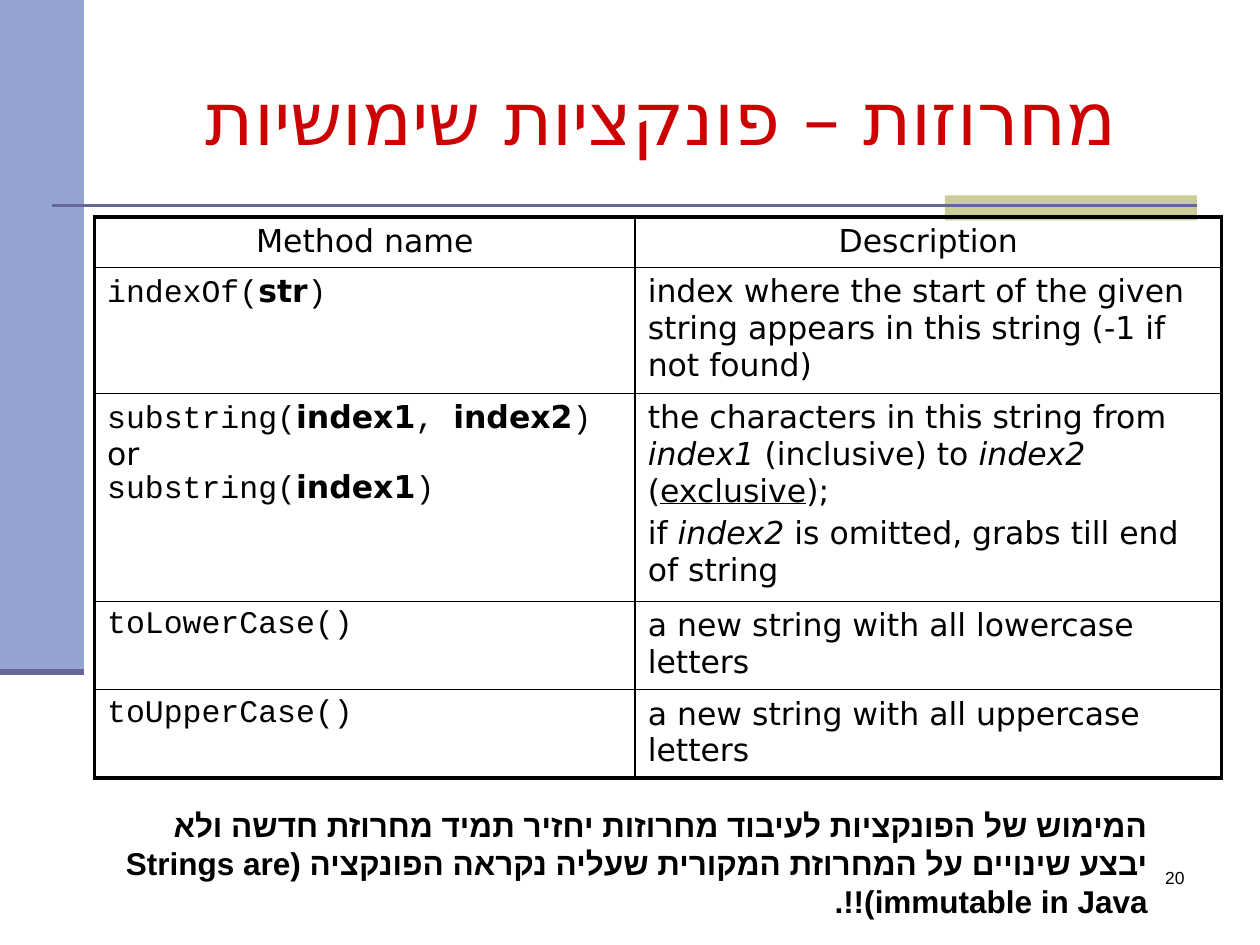
from lxml.etree import SubElement
from pptx import Presentation
from pptx.dml.color import RGBColor
from pptx.enum.shapes import MSO_CONNECTOR, MSO_SHAPE
from pptx.enum.text import MSO_ANCHOR, PP_ALIGN
from pptx.oxml.ns import qn
from pptx.util import Pt

BODY, CODE = "DejaVu Sans", "Courier New"
BLACK, PURPLE = "000000", "666699"
THIN, THICK = 1, 2.25

METHODS = [
    ([[("indexOf(", "code"), ("str", "bold"), (")", "code")]],
     [[("index where the start of the given string appears in this string "
        "(-1 if not found)", "")]]),
    ([[("substring(", "code"), ("index1", "bold"), (", ", "code"),
       ("index2", "bold"), (")", "code")],
      [("or", "")],
      [("substring(", "code"), ("index1", "bold"), (")", "code")]],
     [[("the characters in this string from ", ""), ("index1", "italic"),
       (" (inclusive) to ", ""), ("index2", "italic"), (" (", ""),
       ("exclusive", "underline"), (");", "")],
      [("if ", ""), ("index2", "italic"),
       (" is omitted, grabs till end of string", "")]]),
    ([[("toLowerCase()", "code")]],
     [[("a new string with all lowercase letters", "")]]),
    ([[("toUpperCase()", "code")]],
     [[("a new string with all uppercase letters", "")]]),
]


def color(value):
    return RGBColor.from_string(value)


def add_run(paragraph, text, size, font, fill=BLACK, bold=False, complex_font=None):
    run = paragraph.add_run()
    run.text = text
    run.font.size = Pt(size)
    run.font.name = font
    run.font.bold = bold
    run.font.color.rgb = color(fill)
    SubElement(run._r.get_or_add_rPr(), qn("a:cs"), typeface=complex_font or font)
    return run


def set_right_to_left(paragraph):
    paragraph._p.get_or_add_pPr().set("rtl", "1")


def add_bar(slide, left, top, width, height, fill):
    bar = slide.shapes.add_shape(
        MSO_SHAPE.RECTANGLE, Pt(left), Pt(top), Pt(width), Pt(height))
    bar.shadow.inherit = False
    bar.fill.solid()
    bar.fill.fore_color.rgb = color(fill)
    bar.line.fill.background()


def add_rule(slide, left, top, width, weight):
    rule = slide.shapes.add_connector(
        MSO_CONNECTOR.STRAIGHT, Pt(left), Pt(top), Pt(left + width), Pt(top))
    rule.line.color.rgb = color(PURPLE)
    rule.line.width = Pt(weight)
    SubElement(rule._element.spPr, qn("a:effectLst"))


def add_decoration(slide, left, top, width, height):
    add_bar(slide, left, top, 48, height, "95A3D1")
    add_bar(slide, left + width - 144, top + 111.6, 144, 14.4, "CCCC99")
    add_rule(slide, left + 30, top + 117.6, width - 30, 1.5)
    add_rule(slide, left, top + height, 48, 3.5)


def add_title(slide, left, top, width, height):
    title = slide.shapes.title
    title.left, title.top, title.width, title.height = map(
        Pt, (left, top, width, height))
    title.text_frame.vertical_anchor = MSO_ANCHOR.MIDDLE
    paragraph = title.text_frame.paragraphs[0]
    paragraph.alignment = PP_ALIGN.CENTER
    set_right_to_left(paragraph)
    add_run(paragraph, "מחרוזות – פונקציות שימושיות", 42, "Times New Roman",
            "CC0000", complex_font=BODY)


def set_borders(cell, weights):
    properties = cell._tc.get_or_add_tcPr()
    for index, (side, weight) in enumerate(weights.items()):
        line = properties.makeelement(qn(f"a:ln{side}"), {"w": str(Pt(weight))})
        fill = SubElement(line, qn("a:solidFill"))
        SubElement(fill, qn("a:srgbClr"), val=BLACK)
        properties.insert(index, line)


def fill_cell(cell, paragraphs, alignment):
    cell.fill.background()
    frame = cell.text_frame
    for index, pieces in enumerate(paragraphs):
        paragraph = frame.add_paragraph() if index else frame.paragraphs[0]
        paragraph.alignment = alignment
        paragraph.space_before = Pt(3.6)
        for text, style in pieces:
            run = add_run(paragraph, text, 18, CODE if style == "code" else BODY,
                          bold=style == "bold")
            run.font.italic = style == "italic"
            run.font.underline = style == "underline"


def add_method_table(slide, left, top, column_widths, row_heights):
    header = ([[("Method name", "")]], [[("Description", "")]])
    rows = [header] + METHODS
    table = slide.shapes.add_table(
        len(rows), len(header), Pt(left), Pt(top),
        Pt(sum(column_widths)), Pt(sum(row_heights))).table
    table.first_row = table.horz_banding = False
    for column, width in zip(table.columns, column_widths):
        column.width = Pt(width)
    for row, height in zip(table.rows, row_heights):
        row.height = Pt(height)
    last_row, last_column = len(rows) - 1, len(header) - 1
    for i, row in enumerate(rows):
        for j, paragraphs in enumerate(row):
            cell = table.cell(i, j)
            fill_cell(cell, paragraphs, PP_ALIGN.LEFT if i else PP_ALIGN.CENTER)
            set_borders(cell, {
                "L": THIN if j else THICK,
                "R": THICK if j == last_column else THIN,
                "T": THIN if i else THICK,
                "B": THICK if i == last_row else THIN,
            })
    for paragraph in table.cell(2, 0).text_frame.paragraphs[1:]:
        paragraph.line_spacing = 0.7


def add_text(slide, left, top, width, height, text, size, bold=False):
    box = slide.shapes.add_textbox(Pt(left), Pt(top), Pt(width), Pt(height))
    box.text_frame.word_wrap = True
    paragraph = box.text_frame.paragraphs[0]
    paragraph.alignment = PP_ALIGN.RIGHT
    add_run(paragraph, text, size, "Arial", bold=bold)
    return paragraph


def add_note(slide, left, top, width, height):
    paragraph = add_text(
        slide, left, top, width, height,
        "המימוש של הפונקציות לעיבוד מחרוזות יחזיר תמיד מחרוזת חדשה ולא יבצע "
        "שינויים על המחרוזת המקורית שעליה נקראה הפונקציה "
        "(Strings are immutable in Java)!!.", 18, bold=True)
    set_right_to_left(paragraph)


def main():
    presentation = Presentation()
    presentation.slide_width, presentation.slide_height = Pt(720), Pt(540)
    slide = presentation.slides.add_slide(presentation.slide_layouts[5])
    add_decoration(slide, 0, 0, 684, 384)
    add_title(slide, 72, 21.6, 612, 90)
    add_text(slide, 534, 492, 150, 36, "20", 10)
    add_method_table(slide, 54, 124, (309, 335), (28, 70, 115, 49, 49))
    add_note(slide, 54, 457, 609, 73)
    presentation.save("out.pptx")


if __name__ == "__main__":
    main()
